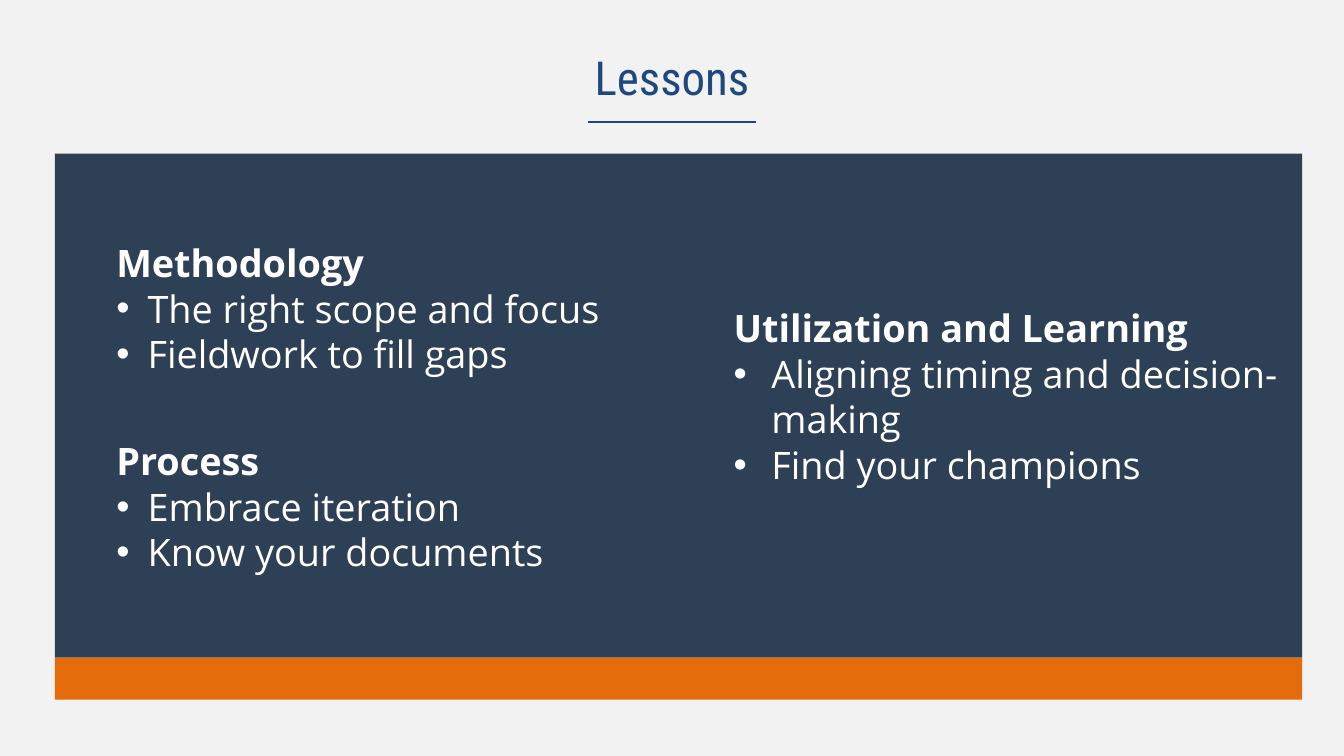
from dataclasses import dataclass

from lxml import etree
from pptx import Presentation
from pptx.dml.color import RGBColor
from pptx.enum.shapes import MSO_CONNECTOR, MSO_SHAPE
from pptx.enum.text import PP_ALIGN
from pptx.oxml.ns import qn
from pptx.slide import Slide
from pptx.text.text import TextFrame
from pptx.util import Inches, Pt

RECTANGLE = MSO_SHAPE.RECTANGLE
STRAIGHT = MSO_CONNECTOR.STRAIGHT
CENTER = PP_ALIGN.CENTER

COLORS = {
    "background": "F2F2F2",
    "panel": "2D4055",
    "band": "E46C0A",
    "title": "1F497D",
    "text": "FFFFFF",
}
SLIDE_WIDTH, SLIDE_HEIGHT = 26.67, 15
PANEL_LEFT, PANEL_WIDTH = 1.09, 24.75
TEXT_INDENT = 1.12


@dataclass
class Lesson:
    heading: str
    points: list[str]
    left: float
    top: float
    width: float
    height: float
    hanging: float


LESSONS = [
    Lesson("Utilization and Learning",
           ["Aligning timing and decision-making", "Find your champions"],
           13.34, 5.99, 12.5, 3.7, 0.75),
    Lesson("Methodology", ["The right scope and focus", "Fieldwork to fill gaps"],
           PANEL_LEFT, 4.7, 12.5, 2.8, 0.62),
    Lesson("Process", ["Embrace iteration", "Know your documents"],
           PANEL_LEFT, 8.63, 10.25, 2.8, 0.62),
]


def color(name: str) -> RGBColor:
    return RGBColor.from_string(COLORS[name])


def add_bar(slide: Slide, top: float, height: float, fill: str) -> None:
    shape = slide.shapes.add_shape(RECTANGLE, Inches(PANEL_LEFT), Inches(top),
                                   Inches(PANEL_WIDTH), Inches(height))
    shape.shadow.inherit = False
    shape.fill.solid()
    shape.fill.fore_color.rgb = color(fill)
    shape.line.fill.background()


def add_text_frame(slide: Slide, left: float, top: float, width: float,
                   height: float) -> TextFrame:
    box = slide.shapes.add_textbox(Inches(left), Inches(top),
                                   Inches(width), Inches(height))
    box.text_frame.word_wrap = True
    return box.text_frame


def add_title(slide: Slide, text: str) -> None:
    paragraph = add_text_frame(slide, 0, 0.92, SLIDE_WIDTH, 1.23).paragraphs[0]
    paragraph.text = text
    paragraph.alignment = CENTER
    paragraph.font.name = "Roboto Condensed"
    paragraph.font.size = Pt(67)
    paragraph.font.color.rgb = color("title")

    line = slide.shapes.add_connector(STRAIGHT, Inches(11.67), Inches(2.42),
                                      Inches(15), Inches(2.42))
    line.line.color.rgb = color("title")
    line.line.width = Pt(3)
    etree.SubElement(line._element.spPr, qn("a:effectLst"))


def add_lesson(slide: Slide, lesson: Lesson) -> None:
    frame = add_text_frame(slide, lesson.left, lesson.top, lesson.width, lesson.height)
    frame.text = "\n".join([lesson.heading, *lesson.points])
    for index, paragraph in enumerate(frame.paragraphs):
        is_point = index > 0
        hanging = lesson.hanging if is_point else 0
        paragraph.line_spacing = Pt(65.2)
        paragraph.font.name = "Open Sans"
        paragraph.font.size = Pt(54)
        paragraph.font.bold = not is_point
        paragraph.font.color.rgb = color("text")
        properties = paragraph._p.get_or_add_pPr()
        properties.set("marL", str(Inches(TEXT_INDENT + hanging)))
        properties.set("indent", str(Inches(-hanging)))
        if is_point:
            # Bullet elements belong before the default run properties
            bullet_font = etree.Element(qn("a:buFont"), typeface="Arial")
            bullet = etree.Element(qn("a:buChar"), char="•")
            defaults = properties.find(qn("a:defRPr"))
            defaults.addprevious(bullet_font)
            defaults.addprevious(bullet)


def main() -> None:
    presentation = Presentation()
    presentation.slide_width = Inches(SLIDE_WIDTH)
    presentation.slide_height = Inches(SLIDE_HEIGHT)
    slide = presentation.slides.add_slide(presentation.slide_layouts[6])
    slide.background.fill.solid()
    slide.background.fill.fore_color.rgb = color("background")

    # Panel with its footer band
    add_bar(slide, 3.05, 10, "panel")
    add_bar(slide, 13.05, 0.83, "band")

    # Title and underline
    add_title(slide, "Lessons")

    # Lesson groups
    for lesson in LESSONS:
        add_lesson(slide, lesson)

    presentation.save("out.pptx")


if __name__ == "__main__":
    main()
